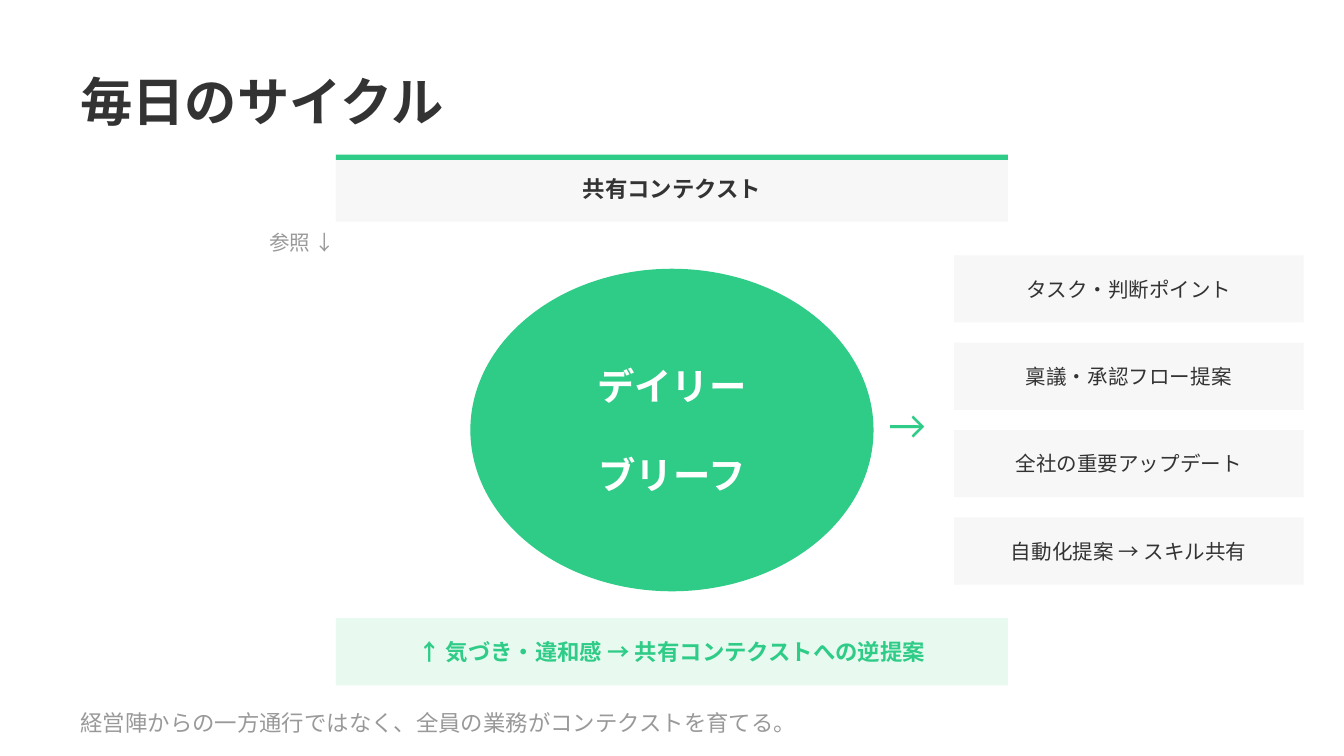
from dataclasses import dataclass

from lxml.etree import SubElement
from pptx import Presentation
from pptx.dml.color import RGBColor
from pptx.enum.shapes import MSO_SHAPE as Shape
from pptx.enum.text import MSO_ANCHOR as Anchor, MSO_AUTO_SIZE as AutoSize, PP_ALIGN as Align
from pptx.oxml.ns import qn
from pptx.util import Inches, Pt


@dataclass(frozen=True)
class Theme:
    font: str = "Noto Sans CJK JP"
    arrow_font: str = "Calibri"
    ink: str = "333333"
    muted: str = "999999"
    green: str = "2ECC87"
    pale_green: str = "E8FAF0"
    panel: str = "F7F7F7"
    white: str = "FFFFFF"
    title: int = 28
    arrow: int = 22
    hub: int = 20
    band: int = 12
    small: int = 11


THEME = Theme()


def assign(target, values):
    for name, value in values.items():
        setattr(target, name, value)


def write(holder, lines, size, color, bold=False, align=Align.CENTER, font=THEME.font, gap=0):
    frame = holder.text_frame
    assign(frame, dict(word_wrap=True, auto_size=AutoSize.NONE, vertical_anchor=Anchor.MIDDLE,
                       margin_left=0, margin_top=0, margin_right=0, margin_bottom=0))
    for index, line in enumerate(lines):
        para = frame.add_paragraph() if index else frame.paragraphs[0]
        assign(para, dict(alignment=align, space_before=Pt(gap if index else 0)))
        span = para.add_run()
        span.text = line
        assign(span.font, dict(name=font, size=Pt(size), bold=bold))
        span.font.color.rgb = RGBColor.from_string(color)
        SubElement(span.font._element, qn("a:ea")).set("typeface", font)


def add_label(page, box, text, size, color, **style):
    label = page.shapes.add_textbox(*map(Inches, box))
    write(label, [text], size, color, **style)


def add_block(page, box, fill, kind=Shape.RECTANGLE):
    block = page.shapes.add_shape(kind, *map(Inches, box))
    block.shadow.inherit = False
    block.fill.solid()
    block.fill.fore_color.rgb = RGBColor.from_string(fill)
    block.line.fill.background()
    return block


def add_panel(page, box, fill, text, size, color, **style):
    add_block(page, box, fill)
    add_label(page, box, text, size, color, **style)


def add_title(page, box, text):
    title = page.shapes.title
    assign(title, dict(zip(("left", "top", "width", "height"), map(Inches, box))))
    write(title, [text], THEME.title, THEME.ink, bold=True, align=Align.LEFT)


def add_context(page, box, text, note):
    left, top, width, height = box
    add_panel(page, box, THEME.panel, text, THEME.band, THEME.ink, bold=True)
    add_block(page, (left, top, width, 0.04), THEME.green)
    add_label(page, (left - 1, top + height, 1.5, 0.3), note, THEME.small, THEME.muted)


def add_hub(page, box, lines):
    left, top, width, height = box
    add_block(page, box, THEME.green, Shape.OVAL)
    label = page.shapes.add_textbox(*map(Inches, (left, top + 0.2, width, height - 0.4)))
    write(label, lines, THEME.hub, THEME.white, bold=True, gap=23.6)
    add_label(page, (left + width, top + height / 2 - 0.3, 0.5, 0.5), "→",
              THEME.arrow, THEME.green, font=THEME.arrow_font)


def add_outputs(page, box, items):
    left, top, width, height = box
    card_height = 0.5
    step = (height - card_height) / (len(items) - 1)
    for index, item in enumerate(items):
        card = (left, top + index * step, width, card_height)
        add_panel(page, card, THEME.panel, item, THEME.small, THEME.ink)


def add_feedback(page, box, text):
    add_panel(page, box, THEME.pale_green, text, THEME.band, THEME.green, bold=True)


def main():
    deck = Presentation()
    assign(deck, dict(slide_width=Inches(10), slide_height=Inches(10 * 9 / 16)))
    page = deck.slides.add_slide(deck.slide_layouts[5])
    page.background.fill.solid()
    page.background.fill.fore_color.rgb = RGBColor.from_string(THEME.white)

    add_title(page, (0.6, 0.4, 9, 0.7), "毎日のサイクル")
    add_context(page, (2.5, 1.15, 5, 0.5), "共有コンテクスト", "参照 ↓")
    add_hub(page, (3.5, 2, 3, 2.4), ["デイリー", "ブリーフ"])
    add_outputs(page, (7.1, 1.9, 2.6, 2.45), [
        "タスク・判断ポイント",
        "稟議・承認フロー提案",
        "全社の重要アップデート",
        "自動化提案 → スキル共有",
    ])
    add_feedback(page, (2.5, 4.6, 5, 0.5), "↑ 気づき・違和感 → 共有コンテクストへの逆提案")
    add_label(page, (0.6, 5.2, 9, 0.35), "経営陣からの一方通行ではなく、全員の業務がコンテクストを育てる。",
              THEME.band, THEME.muted, align=Align.LEFT)
    deck.save("out.pptx")


if __name__ == "__main__":
    main()
